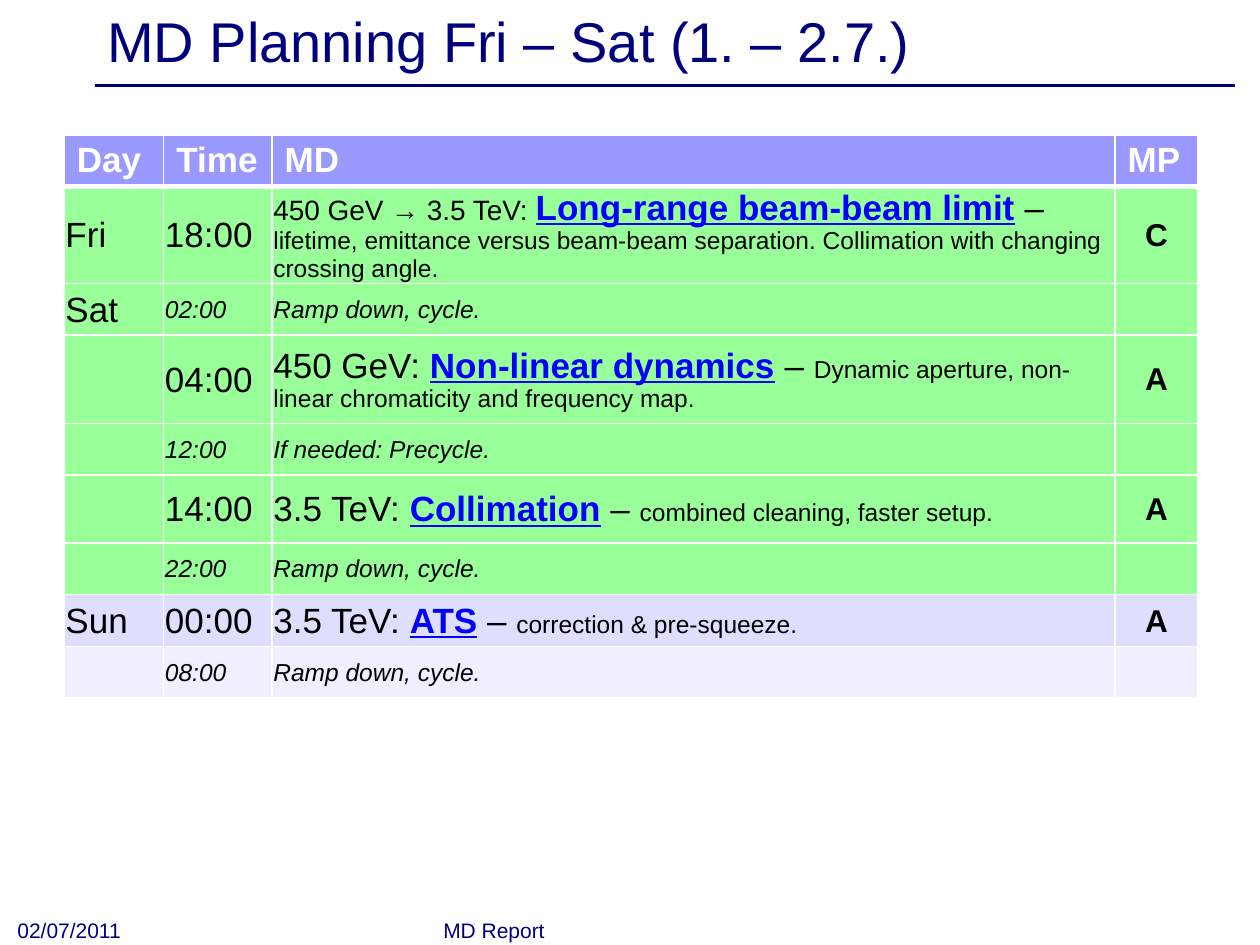
"""Build the MD planning slide: a titled schedule table with a date and footer."""
from lxml import etree
from pptx import Presentation, util as u
from pptx.dml.color import RGBColor
from pptx.enum import shapes, text
from pptx.oxml.ns import qn

NAVY, BLACK, WHITE, LINK = "00007D", "000000", "FFFFFF", "0000FF"
HEAD, GREEN, LILAC, PALE = "9999FF", "99FF99", "DEDEFF", "EFEFFF"
ROW = 0.41


def style(r, size, color, bold=False, italic=False, underline=False):
    f = r.font
    f.name, f.size, f.color.rgb = "Arial", u.Pt(size), RGBColor.from_string(color)
    f.bold, f.italic, f.underline = bold, italic, underline


def format_cell(cell, fill, bottom=1):
    tcPr = cell._tc.get_or_add_tcPr()
    for side in "LRTB":
        width = u.Pt(bottom if side == "B" else 1)
        ln = etree.SubElement(tcPr, qn(f"a:ln{side}"), w=str(width))
        etree.SubElement(etree.SubElement(ln, qn("a:solidFill")), qn("a:srgbClr"), val=WHITE)
    cell.fill.solid()
    cell.fill.fore_color.rgb = RGBColor.from_string(fill)


prs = Presentation()
prs.slide_width, prs.slide_height = u.Inches(10), u.Inches(7.5)
s = prs.slides.add_slide(prs.slide_layouts[5])

sp = s.shapes.title
sp.left, sp.top, sp.width, sp.height = [u.Inches(v) for v in (0.75, 0.03, 9, 0.57)]
tf = sp.text_frame
tf.text = "MD Planning Fri – Sat (1. – 2.7.)"
tf.vertical_anchor = text.MSO_ANCHOR.MIDDLE
tf.paragraphs[0].alignment = text.PP_ALIGN.LEFT
style(tf.paragraphs[0].runs[0], 32, NAVY)

rule = s.shapes.add_connector(
    shapes.MSO_CONNECTOR.STRAIGHT, *[u.Inches(v) for v in (0.75, 0.68, 9.8, 0.68)])
rule.line.color.rgb = RGBColor.from_string(NAVY)
rule.line.width = u.Pt(2)
etree.SubElement(rule._element.spPr, qn("a:effectLst"))

plan = [
    ("Fri", "18:00", [("450 GeV → 3.5 TeV: ", 16), "Long-range beam-beam limit",
                      "lifetime, emittance versus beam-beam separation. "
                      "Collimation with changing crossing angle."], "C", 0.77, GREEN),
    ("Sat", "02:00", "Ramp down, cycle.", "", ROW, GREEN),
    ("", "04:00", [("450 GeV: ", 20), "Non-linear dynamics",
                   "Dynamic aperture, non-linear chromaticity and frequency map."], "A", 0.7, GREEN),
    ("", "12:00", "If needed: Precycle.", "", ROW, GREEN),
    ("", "14:00", [("3.5 TeV: ", 20), "Collimation",
                   "combined cleaning, faster setup."], "A", 0.54, GREEN),
    ("", "22:00", "Ramp down, cycle.", "", ROW, GREEN),
    ("Sun", "00:00", [("3.5 TeV: ", 20), "ATS", "correction & pre-squeeze."], "A", ROW, LILAC),
    ("", "08:00", "Ramp down, cycle.", "", ROW, PALE),
]
columns = {"Day": 0.79, "Time": 0.86, "MD": 6.69, "MP": 0.66}
heights = [ROW] + [row[4] for row in plan]
table = s.shapes.add_table(
    len(heights), len(columns),
    *[u.Inches(v) for v in (0.51, 1.07, sum(columns.values()), sum(heights))]).table
for row, height in zip(table.rows, heights):
    row.height = u.Inches(height)
for j, (name, width) in enumerate(columns.items()):
    table.columns[j].width = u.Inches(width)
    cell = table.cell(0, j)
    cell.text = name
    style(cell.text_frame.paragraphs[0].runs[0], 20, WHITE, bold=True)
    format_cell(cell, HEAD, bottom=3)

for i, (day, time, md, mp, _, fill) in enumerate(plan, 1):
    pause = isinstance(md, str)
    minor = (14, BLACK, False, True)
    if pause:
        md_runs = [(md, minor)]
    else:
        (energy, size), topic, note = md
        md_runs = [(energy, (size, BLACK)), (topic, (20, LINK, True, False, True)),
                   (" – ", (20, BLACK)), (note, (14, BLACK))]
    contents = [[(day, (20, BLACK))], [(time, minor if pause else (20, BLACK))],
                md_runs, [(mp, (18, BLACK, True))]]
    for j, runs in enumerate(contents):
        cell = table.cell(i, j)
        format_cell(cell, fill, bottom=1)
        cell.vertical_anchor = text.MSO_ANCHOR.MIDDLE
        cell.margin_left = cell.margin_right = cell.margin_top = u.Inches(0.01)
        cell.margin_bottom = 0
        p = cell.text_frame.paragraphs[0]
        if j == 3:
            p.alignment = text.PP_ALIGN.CENTER
        for words, look in runs:
            if words:
                r = p.add_run()
                r.text = words
                style(r, *look)

for words, left, width in [("MD Report", 3.42, 3.17), ("02/07/2011", 0.04, 2.33)]:
    sp = s.shapes.add_textbox(*[u.Inches(v) for v in (left, 7.24, width, 0.29)])
    tf = sp.text_frame
    tf.word_wrap = True
    tf.vertical_anchor = text.MSO_ANCHOR.BOTTOM
    tf.text = words
    style(tf.paragraphs[0].runs[0], 12, NAVY)

prs.save("out.pptx")
